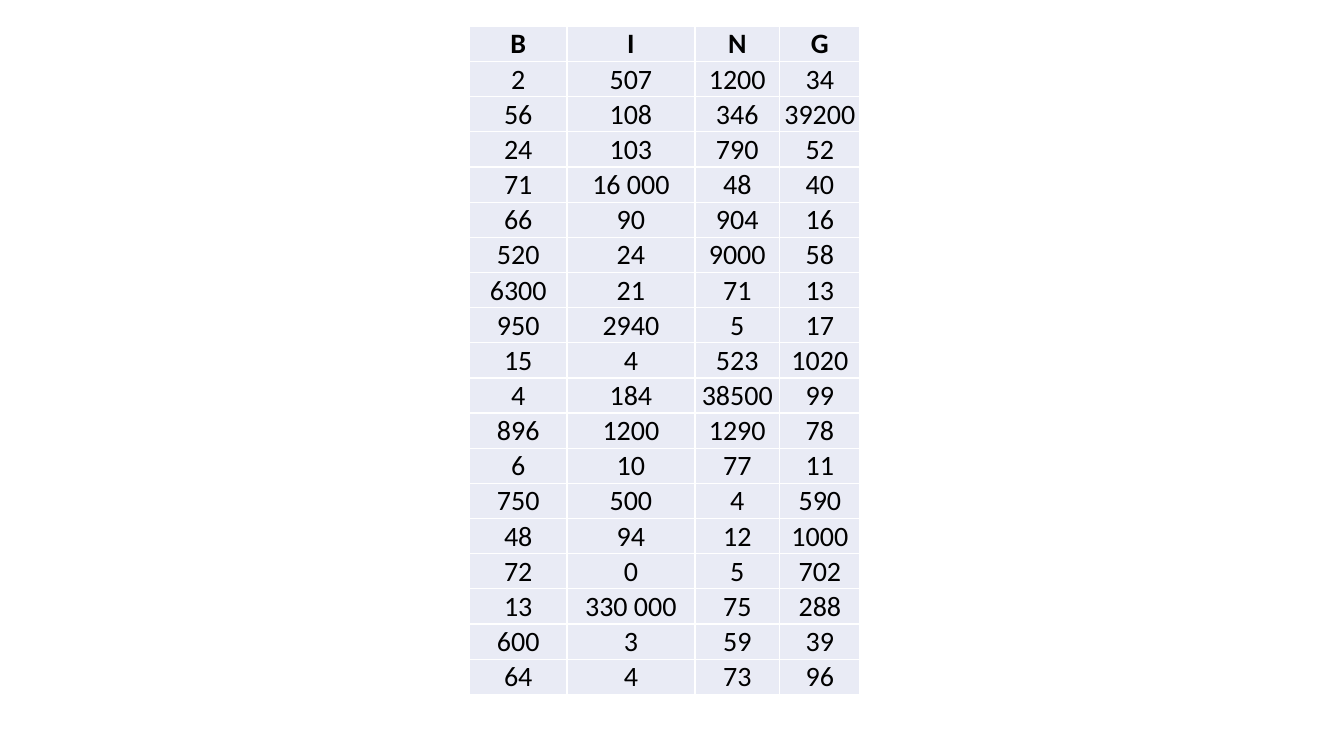
from dataclasses import dataclass

from lxml import etree
from pptx import Presentation
from pptx import util as u
from pptx.dml import color
from pptx.enum import text
from pptx.oxml import ns


@dataclass(frozen=True)
class Theme:
    font: str = "Calibri"
    size: float = 20
    ink: str = "000000"
    cell: str = "E9EBF5"
    rule: str = "FFFFFF"
    rule_width: float = 1
    inset: float = 0.6


class SlideBuilder:
    def __init__(self, theme, slide):
        self.theme = theme
        self.slide = slide

    def table(self, left, top, widths, row_height, rows):
        frame = self.slide.shapes.add_table(
            len(rows), len(widths), u.Pt(left), u.Pt(top),
            u.Pt(sum(widths)), u.Pt(row_height * len(rows)))
        grid = frame.table
        grid.first_row = grid.horz_banding = False
        for column, width in zip(grid.columns, widths):
            column.width = u.Pt(width)
        for r, values in enumerate(rows):
            grid.rows[r].height = u.Pt(row_height)
            for c, value in enumerate(values):
                self.cell(grid.cell(r, c), value, bold=r == 0)

    def cell(self, cell, value, bold):
        theme = self.theme
        cell.fill.solid()
        cell.fill.fore_color.rgb = color.RGBColor.from_string(theme.cell)
        cell.vertical_anchor = text.MSO_ANCHOR.MIDDLE
        cell.margin_left = cell.margin_right = cell.margin_top = u.Pt(theme.inset)
        cell.margin_bottom = 0
        paragraph = cell.text_frame.paragraphs[0]
        paragraph.alignment = text.PP_ALIGN.CENTER
        run = paragraph.add_run()
        run.text = value
        run.font.name = theme.font
        run.font.size = u.Pt(theme.size)
        run.font.bold = bold
        run.font.color.rgb = color.RGBColor.from_string(theme.ink)
        self.borders(cell)

    def borders(self, cell):
        # Border lines come before the fill in the cell properties
        properties = cell._tc.get_or_add_tcPr()
        for i, side in enumerate(("a:lnL", "a:lnR", "a:lnT", "a:lnB")):
            line = etree.Element(ns.qn(side), w=str(u.Pt(self.theme.rule_width)))
            fill = etree.SubElement(line, ns.qn("a:solidFill"))
            etree.SubElement(fill, ns.qn("a:srgbClr"), val=self.theme.rule)
            properties.insert(i, line)


# Bingo numbers, column by column
BINGO = {
    "B": ["2", "56", "24", "71", "66", "520", "6300", "950", "15",
          "4", "896", "6", "750", "48", "72", "13", "600", "64"],
    "I": ["507", "108", "103", "16 000", "90", "24", "21", "2940", "4",
          "184", "1200", "10", "500", "94", "0", "330 000", "3", "4"],
    "N": ["1200", "346", "790", "48", "904", "9000", "71", "5", "523",
          "38500", "1290", "77", "4", "12", "5", "75", "59", "73"],
    "G": ["34", "39200", "52", "40", "16", "58", "13", "17", "1020",
          "99", "78", "11", "590", "1000", "702", "288", "39", "96"],
}


def main():
    deck = Presentation()
    deck.slide_width, deck.slide_height = u.Pt(960), u.Pt(540)
    builder = SlideBuilder(Theme(), deck.slides.add_slide(deck.slide_layouts[6]))

    # Bingo table: letters on top, numbers below
    bingo_rows = [list(BINGO), *zip(*BINGO.values())]
    builder.table(335.4, 18.8, [69.6, 91.4, 60.6, 57.4], 25, bingo_rows)

    deck.save("out.pptx")


if __name__ == "__main__":
    main()
